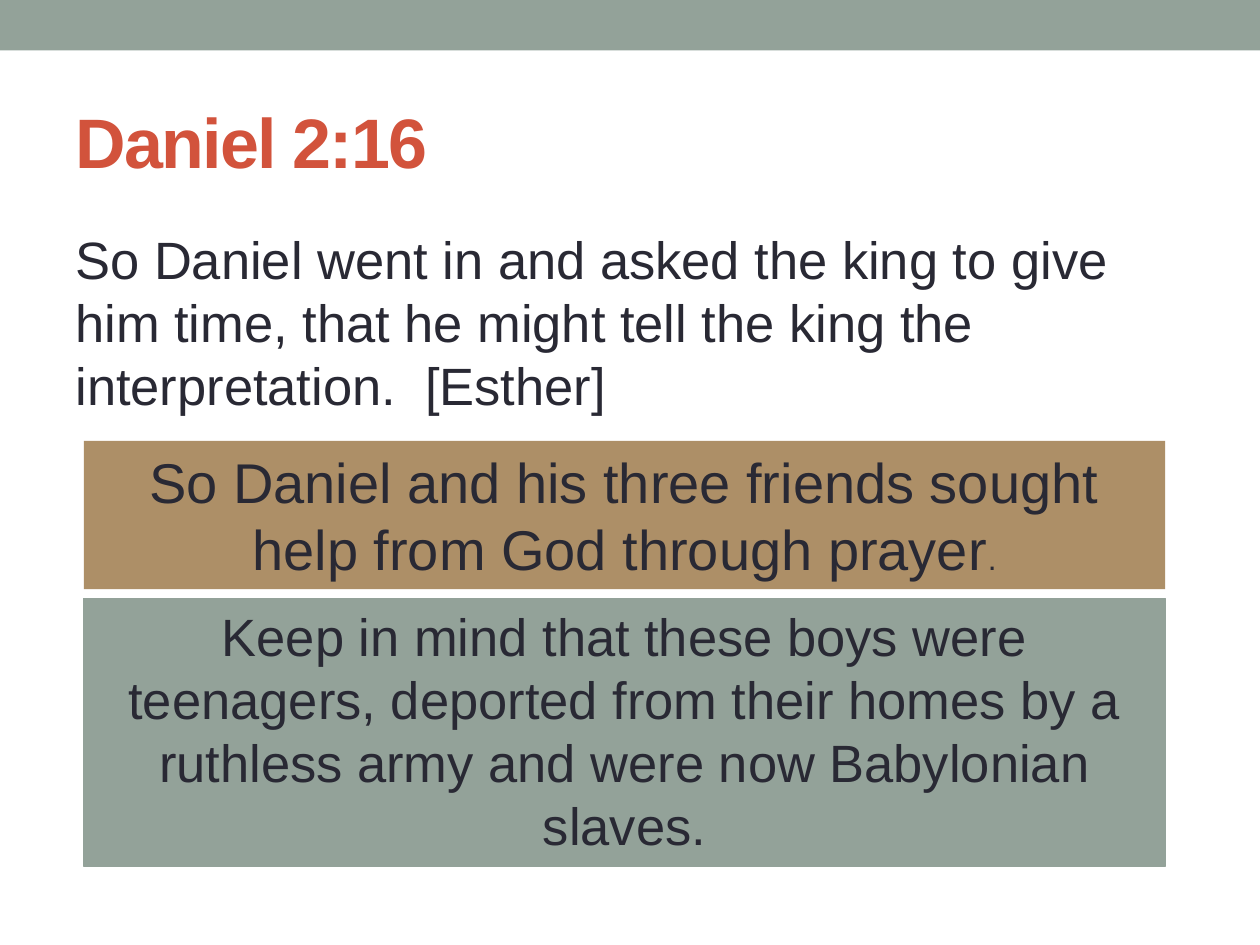
from dataclasses import dataclass
from typing import Optional

from pptx import Presentation
from pptx.dml.color import RGBColor
from pptx.enum.shapes import MSO_SHAPE as Shape
from pptx.enum.text import MSO_ANCHOR as Anchor, PP_ALIGN as Align
from pptx.util import Cm, Pt

COLORS = {"sage": "93A299", "tan": "AD8F67", "red": "D2533C", "ink": "292934"}
FONT = "Arial"


@dataclass
class Panel:
    top: float
    height: float
    color: str
    size: int
    text: str
    outlined: bool = False
    small_ending: str = ""


PANELS = [
    Panel(8.89, 2.99, "tan", 32,
          "So Daniel and his three friends sought help from God through prayer",
          small_ending="."),
    Panel(12.06, 5.4, "sage", 30,
          "Keep in mind that these boys were teenagers, deported from their homes "
          "by a ruthless army and were now Babylonian slaves.",
          outlined=True),
]


def rgb(name: str) -> RGBColor:
    return RGBColor.from_string(COLORS[name])


def add_rectangle(page, left: float, top: float, width: float, height: float,
                  color: str, line: Optional[str] = None):
    box = page.shapes.add_shape(Shape.RECTANGLE, Cm(left), Cm(top), Cm(width), Cm(height))
    box.shadow.inherit = False
    box.fill.solid()
    box.fill.fore_color.rgb = rgb(color)
    if line:
        box.line.color.rgb = rgb(line)
        box.line.width = Pt(0.75)
    else:
        box.line.fill.background()
    return box


def write(frame, text: str, size: int, color: str = "ink", align=Align.LEFT,
          anchor=Anchor.TOP):
    frame.word_wrap = True
    frame.vertical_anchor = anchor
    para = frame.paragraphs[0]
    para.alignment = align
    para.add_run().text = text
    para.font.name = FONT
    para.font.size = Pt(size)
    para.font.color.rgb = rgb(color)
    return para


def add_title(page, text: str) -> None:
    title = page.shapes.title
    title.left, title.top, title.width, title.height = Cm(1.27), Cm(1.47), Cm(22.86), Cm(2.74)
    para = write(title.text_frame, text, 40, "red", anchor=Anchor.MIDDLE)
    para.font.bold = True
    para.runs[0].font._element.set("spc", "-100")


def add_verse(page, text: str) -> None:
    box = page.shapes.add_textbox(Cm(1.27), Cm(4.45), Cm(22.86), Cm(4.45))
    para = write(box.text_frame, text, 30)
    para.space_before = Pt(6)


def add_panel(page, panel: Panel) -> None:
    box = add_rectangle(page, 1.69, panel.top, 21.8, panel.height, panel.color,
                        panel.color if panel.outlined else None)
    para = write(box.text_frame, panel.text, panel.size, align=Align.CENTER)
    if panel.small_ending:
        span = para.add_run()
        span.text = panel.small_ending
        span.font.size = Pt(18)


def main() -> None:
    deck = Presentation()
    deck.slide_width, deck.slide_height = Cm(25.4), Cm(19.05)
    page = deck.slides.add_slide(deck.slide_layouts[5])
    add_rectangle(page, 0, 0, 25.4, 1.02, "sage")
    add_title(page, "Daniel 2:16")
    add_verse(page, "So Daniel went in and asked the king to give him time, that he "
                    "might tell the king the interpretation.\u00a0 [Esther]")
    for panel in PANELS:
        add_panel(page, panel)
    deck.save("out.pptx")


if __name__ == "__main__":
    main()
